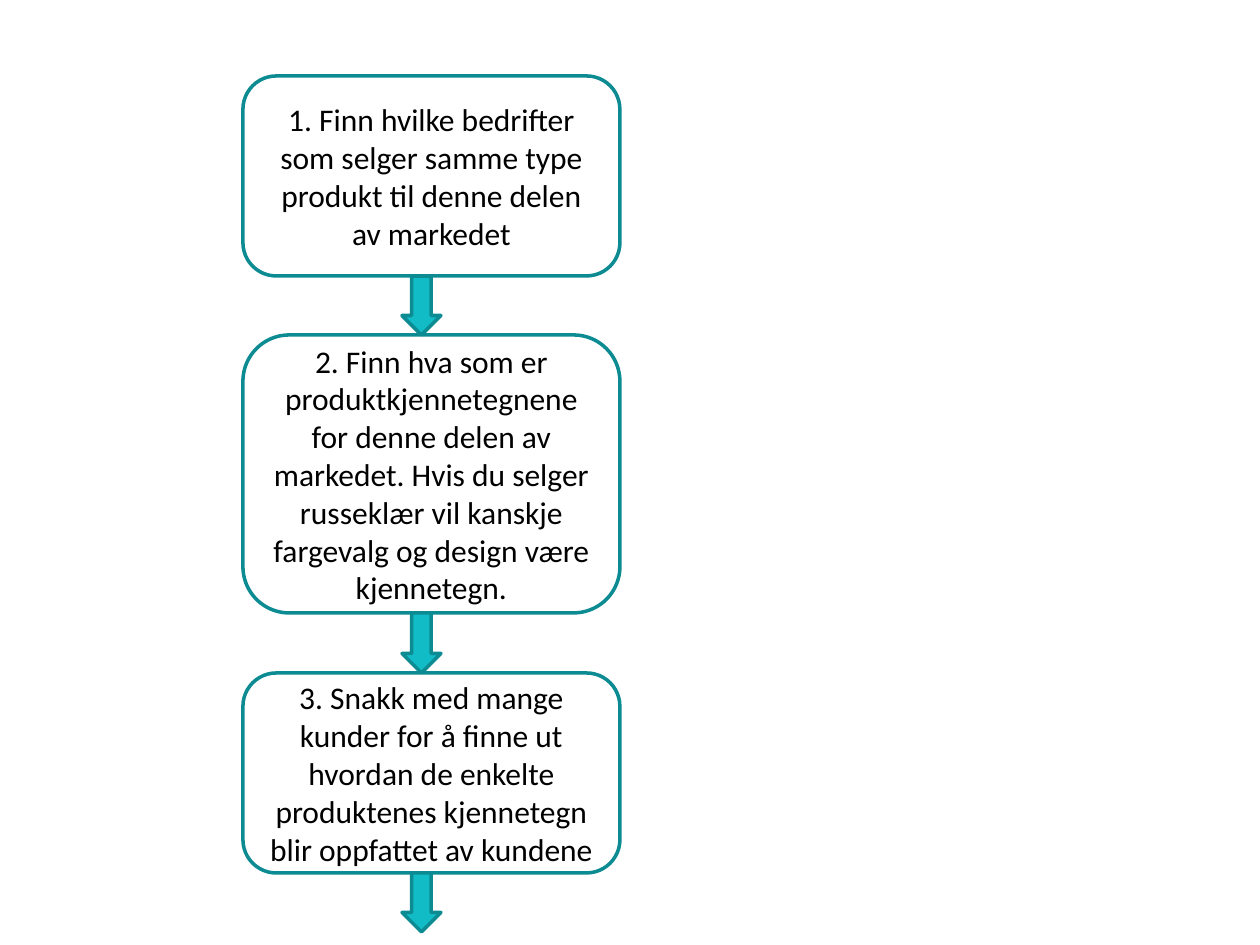
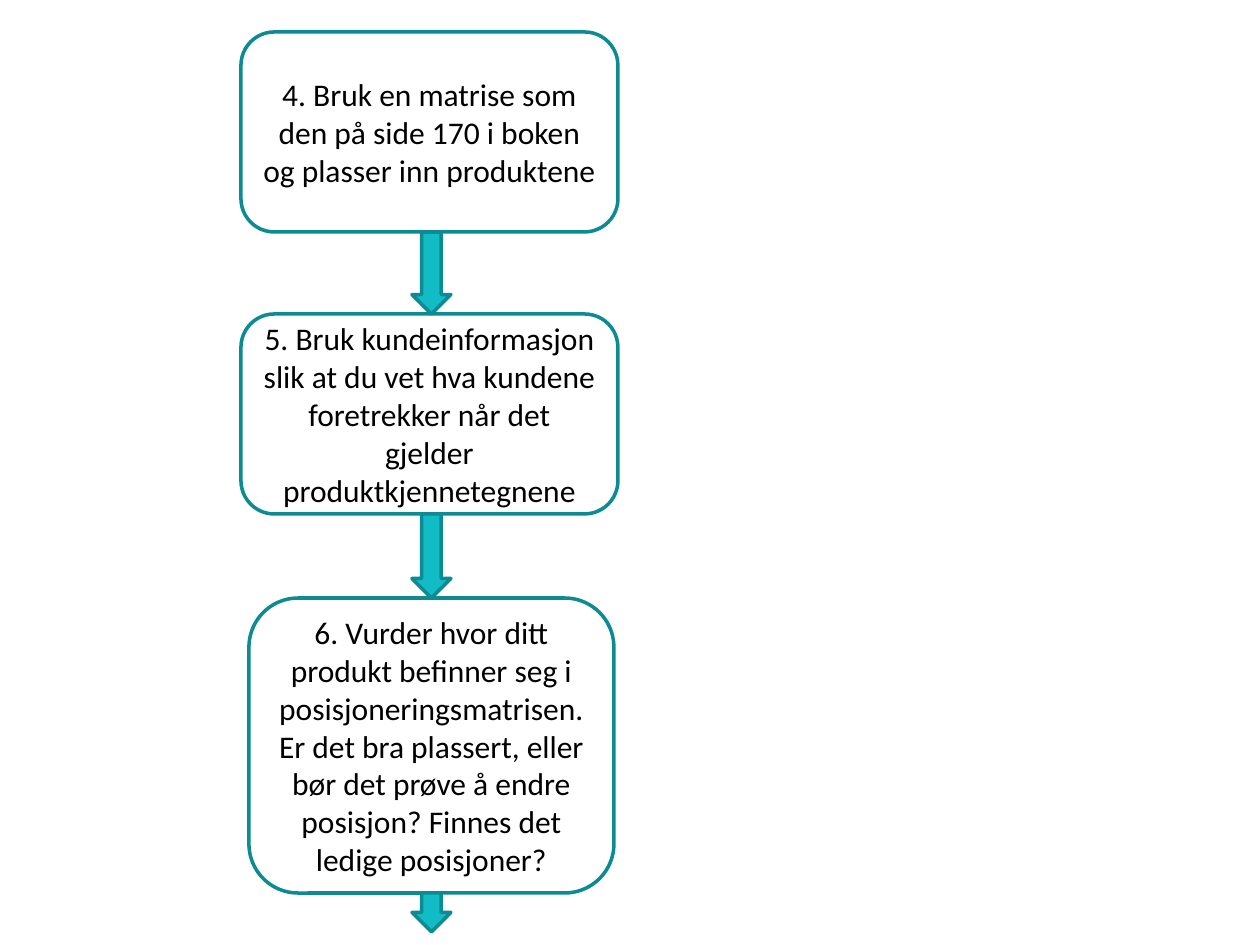
from pptx import Presentation
from pptx.dml.color import RGBColor
from pptx.enum.shapes import MSO_SHAPE as Preset
from pptx.enum.text import MSO_ANCHOR as Anchor, PP_ALIGN as Align
from pptx.util import Emu, Pt

PX = 914400 // 126
COLORS = {"white": "FFFFFF", "teal": "12BCC6", "outline": "0D8B92", "text": "000000"}
ARROW_WIDTH = 39
CHAIN_END = 932

CHAINS = [
    {"arrow_left": 402, "steps": [
        ("1. Finn hvilke bedrifter som selger samme type produkt til denne delen av markedet",
         (243, 76, 377, 200)),
        ("2. Finn hva som er produktkjennetegnene for denne delen av markedet. "
         "Hvis du selger russeklær vil kanskje fargevalg og design være kjennetegn.",
         (243, 335, 377, 278)),
        ("3. Snakk med mange kunder for å finne ut hvordan de enkelte produktenes "
         "kjennetegn blir oppfattet av kundene",
         (243, 673, 377, 200)),
    ]},
    {"arrow_left": 412, "steps": [
        ("4. Bruk en matrise som den på side 170 i boken og plasser inn produktene",
         (241, 32, 377, 200)),
        ("5. Bruk kundeinformasjon slik at du vet hva kundene foretrekker når det "
         "gjelder produktkjennetegnene",
         (241, 314, 377, 200)),
        ("6. Vurder hvor ditt produkt befinner seg i posisjoneringsmatrisen. "
         "Er det bra plassert, eller bør det prøve å endre posisjon? "
         "Finnes det ledige posisjoner?",
         (249, 598, 365, 295)),
    ]},
]


def color(name):
    return RGBColor.from_string(COLORS[name])


def add_outlined(slide, preset, box, fill):
    shape = slide.shapes.add_shape(preset, *(Emu(value * PX) for value in box))
    shape.shadow.inherit = False
    shape.fill.solid()
    shape.fill.fore_color.rgb = color(fill)
    shape.line.color.rgb = color("outline")
    shape.line.width = Pt(2)
    return shape


def write(shape, text, size=18, font="Calibri", ink="text", align=Align.CENTER):
    frame = shape.text_frame
    frame.word_wrap = True
    frame.vertical_anchor = Anchor.MIDDLE
    paragraph = frame.paragraphs[0]
    paragraph.alignment = align
    run = paragraph.add_run()
    run.text = text
    run.font.size = Pt(size)
    run.font.name = font
    run.font.color.rgb = color(ink)


def add_chain(slide, steps, arrow_left):
    for text, box in steps:
        write(add_outlined(slide, Preset.ROUNDED_RECTANGLE, box, "white"), text)
    starts = [top + height for _, (_, top, _, height) in steps]
    ends = [box[1] for _, box in steps[1:]] + [CHAIN_END]
    for start, end in zip(starts, ends):
        add_outlined(slide, Preset.DOWN_ARROW,
                     (arrow_left, start, ARROW_WIDTH, end - start), "teal")


def main():
    """Build the six-step positioning flow over two slides."""
    presentation = Presentation()
    presentation.slide_width = Emu(1260 * PX)
    presentation.slide_height = Emu(945 * PX)
    for chain in CHAINS:
        slide = presentation.slides.add_slide(presentation.slide_layouts[6])
        add_chain(slide, **chain)
    presentation.save("out.pptx")


if __name__ == "__main__":
    main()
